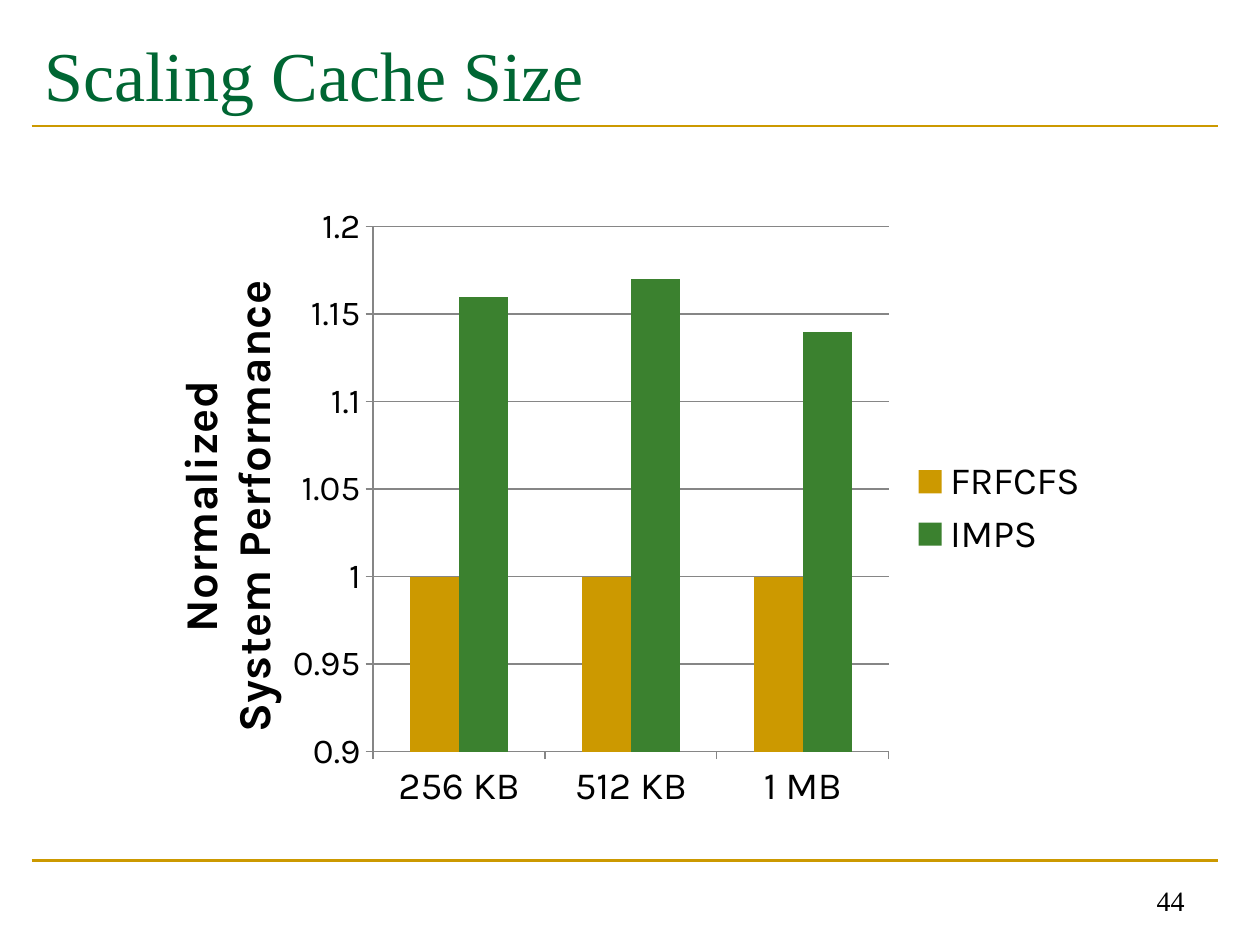
import pptx
import pptx.chart.data
import pptx.dml.color
import pptx.enum.chart
import pptx.enum.shapes
import pptx.enum.text
import pptx.oxml
import pptx.oxml.ns
import pptx.util
from pptx.util import Cm, Pt

GOLD, GREEN, DARK_GREEN = "CC9900", "3B812F", "006633"
BLACK, GRAY = "000000", "868686"


def color(value):
    return pptx.dml.color.RGBColor.from_string(value)


def set_layout(element, index, **parts):
    """Place a chart part by fractions of the chart's size."""
    for old in element.findall(pptx.oxml.ns.qn("c:layout")):
        element.remove(old)
    values = "".join(f'<c:{name} val="{value}"/>' for name, value in parts.items())
    element.insert(index, pptx.oxml.parse_xml(
        f'<c:layout {pptx.oxml.ns.nsdecls("c")}><c:manualLayout>{values}'
        "</c:manualLayout></c:layout>"))


class SlideBuilder:
    serif = "Times New Roman"
    sans = "Karla"

    def __init__(self, deck):
        self.page = deck.slides.add_slide(deck.slide_layouts[5])

    def style(self, font, name, size, tone=BLACK, bold=False):
        font.name, font.size, font.bold = name, Pt(size), bold
        font.color.rgb = color(tone)

    def title(self, text, left, top, width, height):
        box = self.page.shapes.title
        box.left, box.top, box.width, box.height = map(Cm, (left, top, width, height))
        frame = box.text_frame
        frame.text = text
        frame.vertical_anchor = pptx.enum.text.MSO_ANCHOR.MIDDLE
        frame.paragraphs[0].alignment = pptx.enum.text.PP_ALIGN.LEFT
        self.style(frame.paragraphs[0].runs[0].font, self.serif, 40, DARK_GREEN)

    def rule(self, left, right, y):
        line = self.page.shapes.add_connector(
            pptx.enum.shapes.MSO_CONNECTOR.STRAIGHT, Cm(left), Cm(y), Cm(right), Cm(y))
        line.line.color.rgb = color(GOLD)
        line.line.width = Pt(1.5)
        line._element.spPr.append(
            pptx.oxml.parse_xml(f'<a:effectLst {pptx.oxml.ns.nsdecls("a")}/>'))

    def page_number(self, text, left, top, width, height):
        box = self.page.shapes.add_textbox(*map(Cm, (left, top, width, height)))
        frame = box.text_frame
        frame.word_wrap = True
        frame.text = text
        frame.vertical_anchor = pptx.enum.text.MSO_ANCHOR.BOTTOM
        frame.paragraphs[0].alignment = pptx.enum.text.PP_ALIGN.RIGHT
        self.style(frame.paragraphs[0].runs[0].font, self.serif, 16)

    def column_chart(self, categories, series, axis_title, left, top, width, height):
        data = pptx.chart.data.CategoryChartData()
        data.categories = categories
        for name, values, _ in series:
            data.add_series(name, values)
        chart = self.page.shapes.add_chart(
            pptx.enum.chart.XL_CHART_TYPE.COLUMN_CLUSTERED,
            *map(Cm, (left, top, width, height)), data).chart
        self.style(chart.font, self.sans, 10)
        chart.has_title = False

        # Columns
        plot = chart.plots[0]
        plot.vary_by_categories = False
        plot.gap_width, plot.overlap = 150, 0
        for column, (_, _, tone) in zip(plot.series, series):
            column.format.fill.solid()
            column.format.fill.fore_color.rgb = color(tone)

        # Axes
        value_axis = chart.value_axis
        for axis, size in ((chart.category_axis, 22), (value_axis, 20)):
            self.style(axis.tick_labels.font, self.sans, size)
            axis.major_tick_mark = pptx.enum.chart.XL_TICK_MARK.OUTSIDE
            axis.format.line.color.rgb = color(GRAY)
        value_axis.minimum_scale, value_axis.maximum_scale = 0.9, 1.2
        value_axis.major_unit = 0.05
        value_axis.has_major_gridlines = True
        value_axis.major_gridlines.format.line.color.rgb = color(GRAY)
        title = value_axis.axis_title
        title.text_frame.text = axis_title
        for para in title.text_frame.paragraphs:
            self.style(para.runs[0].font, self.sans, 26, bold=True)

        # Legend and placement
        chart.has_legend = True
        chart.legend.position = pptx.enum.chart.XL_LEGEND_POSITION.RIGHT
        chart.legend.include_in_layout = False
        self.style(chart.legend.font, self.sans, 22)
        set_layout(title._element, 1, xMode="edge", yMode="edge", x=0.04, y=0.13)
        set_layout(chart._chartSpace.chart.plotArea, 0, layoutTarget="inner",
                   xMode="edge", yMode="edge", x=0.25, y=0.05, w=0.53, h=0.84)


def main():
    deck = pptx.Presentation()
    deck.slide_width, deck.slide_height = Cm(25.4), Cm(19.05)
    builder = SlideBuilder(deck)

    # Frame of the slide
    for y in (2.54, 17.35):
        builder.rule(0.64, 24.56, y)
    builder.title("Scaling Cache Size", 0.64, 0.43, 23.93, 2.11)
    builder.page_number("44", 18.21, 17.35, 5.92, 1.27)

    # Performance by cache size
    builder.column_chart(
        ["256 KB", "512 KB", "1 MB"],
        [("FRFCFS", (1, 1, 1), GOLD), ("IMPS", (1.16, 1.17, 1.14), GREEN)],
        "Normalized\nSystem Performance", 2.62, 3.94, 19.61, 12.6)
    deck.save("out.pptx")


if __name__ == "__main__":
    main()
